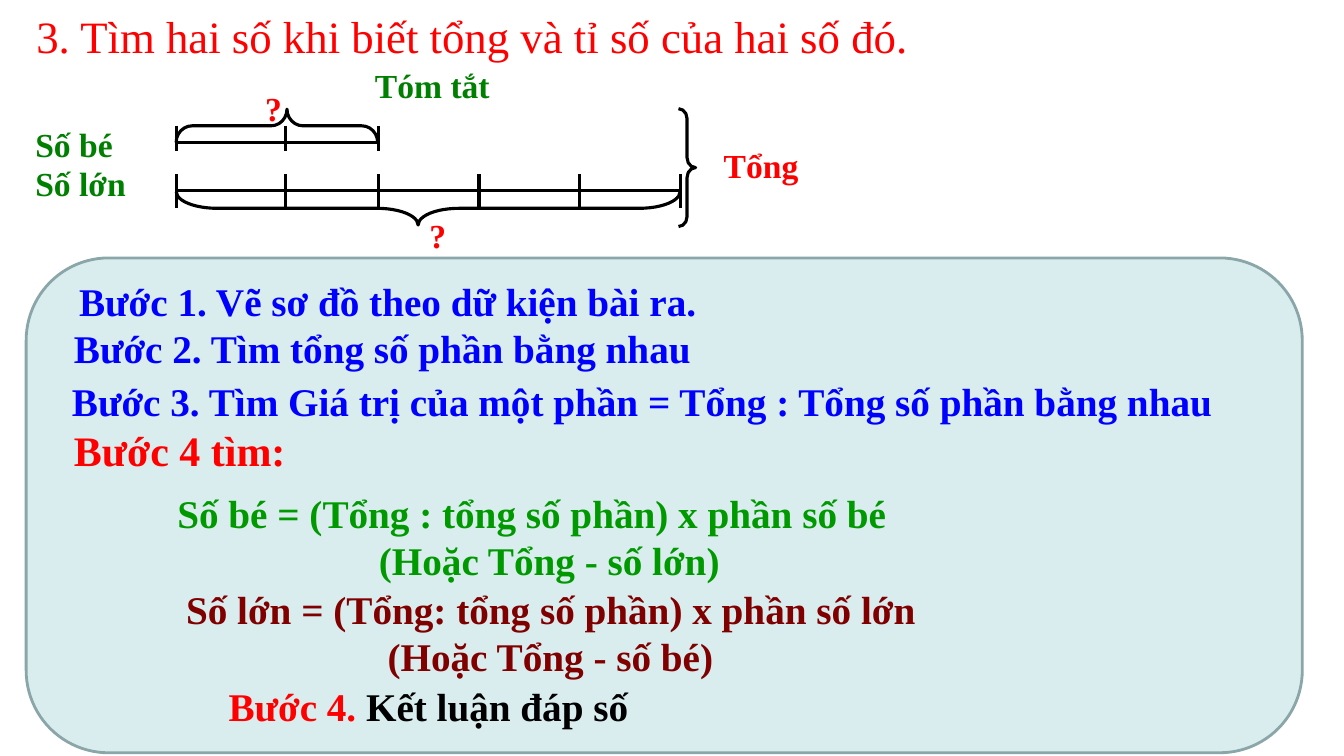
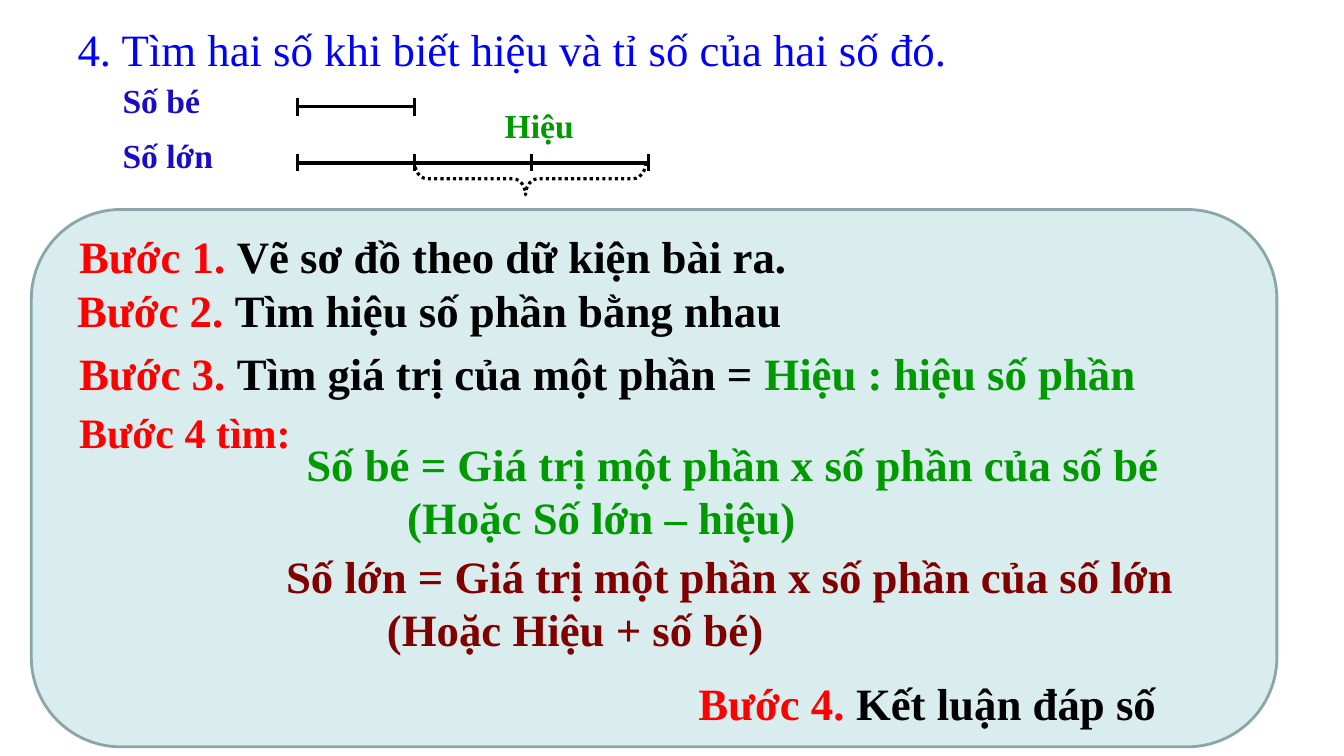
from pptx import Presentation
from pptx.dml.color import RGBColor
from pptx.enum.dml import MSO_LINE
from pptx.enum.shapes import MSO_CONNECTOR, MSO_SHAPE
from pptx.enum.text import MSO_ANCHOR, MSO_AUTO_SIZE, PP_ALIGN
from pptx.oxml.xmlchemy import OxmlElement
from pptx.util import Cm, Pt

FONT = "Times New Roman"
BLACK = RGBColor(0x00, 0x00, 0x00)
RED = RGBColor(0xFF, 0x00, 0x00)
BLUE = RGBColor(0x00, 0x00, 0xFF)
INDIGO = RGBColor(0x19, 0x0B, 0xC8)
GREEN = RGBColor(0x00, 0x99, 0x00)
FOREST = RGBColor(0x00, 0x80, 0x00)
MAROON = RGBColor(0x80, 0x00, 0x00)
PALE = RGBColor(0xD9, 0xED, 0xEF)
EDGE = RGBColor(0x8A, 0xA6, 0xA8)


def place(shape, left, top, width, height):
    """Move and size a shape in centimetres."""
    shape.left, shape.top = Cm(left), Cm(top)
    shape.width, shape.height = Cm(width), Cm(height)


def write(shape, lines, bold=True):
    """Fill a shape with lines of (parts, size, indent, gap)."""
    frame = shape.text_frame
    frame.word_wrap = True
    frame.auto_size = MSO_AUTO_SIZE.NONE
    frame.vertical_anchor = MSO_ANCHOR.TOP
    for index, (parts, size, indent, gap) in enumerate(lines):
        para = frame.add_paragraph() if index else frame.paragraphs[0]
        props = para._p.get_or_add_pPr()
        props.set("marL", str(Cm(indent)))
        props.set("indent", "0")
        props.append(OxmlElement("a:buNone"))
        para.alignment = PP_ALIGN.LEFT
        para.space_before, para.space_after = Pt(gap), Pt(0)
        for text, color in parts:
            run = para.add_run()
            run.text = text
            font = run.font
            font.name, font.size, font.bold = FONT, Pt(size), bold
            font.color.rgb = color


def say(slide, left, top, width, height, lines):
    """Add a text box with the given lines."""
    box = slide.shapes.add_textbox(Cm(left), Cm(top), Cm(width), Cm(height))
    write(box, lines)


def label(slide, left, top, text, color):
    """Add a short bold label of a sketch."""
    say(slide, left, top, 4, 1.3, [([(text, color)], 24, 0, 0)])


def stroke(slide, start, end):
    """Draw a straight black line."""
    line = slide.shapes.add_connector(MSO_CONNECTOR.STRAIGHT, *map(Cm, start + end))
    line.line.color.rgb = BLACK
    line.line.width = Pt(2.25)
    line._element.spPr.append(OxmlElement("a:effectLst"))


def ruler(slide, marks, level, top, foot):
    """Draw a level line with a tick at each mark."""
    stroke(slide, (marks[0], level), (marks[-1], level))
    for mark in marks:
        stroke(slide, (mark, top), (mark, foot))


def brace(slide, left, top, width, height, bends, turn=0, dotted=False):
    """Draw a brace that fills the box after its turn."""
    wide, high = (height, width) if turn else (width, height)
    x, y = left + (width - wide) / 2, top + (height - high) / 2
    shape = slide.shapes.add_shape(MSO_SHAPE.RIGHT_BRACE, Cm(x), Cm(y), Cm(wide), Cm(high))
    shape.rotation = turn
    shape.shadow.inherit = False
    shape.fill.background()
    shape.line.color.rgb = BLACK
    shape.line.width = Pt(2.25)
    if dotted:
        shape.line.dash_style = MSO_LINE.ROUND_DOT
    for index, bend in enumerate(bends):
        shape.adjustments[index] = bend


def sketch_sum(slide, left, top):
    """Draw the two lengths and their sum."""
    marks = [left + 3.81, left + 6.55] + [left + 8.89 + 2.54 * step for step in range(4)]
    ruler(slide, marks[:3], top + 2.08, top + 1.65, top + 2.29)
    ruler(slide, marks, top + 3.28, top + 2.87, top + 3.73)
    brace(slide, left + 16.46, top + 1.22, 0.43, 2.97, (0.58, 0.5))
    brace(slide, left + 3.8, top + 1.23, 5.08, 0.84, (0.48, 0.55), 270)
    brace(slide, left + 3.8, top + 3.31, 12.7, 0.84, (1.23, 0.52), 90)
    for x, y, text, color in [
        (8.56, 0, "Tóm tắt", FOREST),
        (0, 1.47, "Số bé", FOREST),
        (0, 2.46, "Số lớn", FOREST),
        (5.79, 0.56, "?", RED),
        (9.93, 3.78, "?", RED),
        (17.35, 2.01, "Tổng", RED),
    ]:
        label(slide, left + x, top + y, text, color)


def sketch_gap(slide, left, top):
    """Draw the two lengths and their difference."""
    marks = [left + 4.65 + 2.95 * step for step in range(4)]
    ruler(slide, marks[:2], top + 0.79, top + 0.58, top + 1.02)
    ruler(slide, marks, top + 2.21, top + 1.98, top + 2.41)
    brace(slide, left + 7.61, top + 2.2, 5.82, 0.81, (0.39, 0.52), 90, True)
    label(slide, left, top, "Số bé", INDIGO)
    label(slide, left, top + 1.37, "Số lớn", INDIGO)
    label(slide, left + 9.63, top + 0.61, "Hiệu", GREEN)


def panel(slide, left, top, width, height, steps, rules):
    """Draw the rounded panel with its steps and rules."""
    body = slide.placeholders[1]
    card = slide.shapes.add_shape(
        MSO_SHAPE.ROUNDED_RECTANGLE, Cm(left), Cm(top), Cm(width), Cm(height))
    card.shadow.inherit = False
    card.fill.solid()
    card.fill.fore_color.rgb = PALE
    card.line.color.rgb = EDGE
    card.line.width = Pt(2)
    body._element.addprevious(card._element)
    place(body, left + 0.9, top + 0.36, width - 1.2, 5.4)
    write(body, steps)
    for x, y, lines in rules:
        say(slide, left + x, top + y, width - x, 1.4 * len(lines), lines)


def pair(first, second, color, size, indent):
    """Return a rule and its indented other way."""
    return [([(first, color)], size, 0, 0), ([(second, color)], size, indent, 0)]


def closing(size):
    """Return the last step."""
    return [([("Bước 4. ", RED), ("Kết luận đáp số", BLACK)], size, 0, 0)]


def start(deck, left, top, text, color):
    """Add a slide with its title."""
    slide = deck.slides.add_slide(deck.slide_layouts[1])
    place(slide.shapes.title, left, top, 23.7, 1.63)
    write(slide.shapes.title, [([(text, color)], 32, 0, 0)], False)
    return slide


def sum_slide(deck):
    """Build the slide on sum and ratio."""
    slide = start(deck, 0.66, 0.08, "3. Tìm hai số khi biết tổng và tỉ số của hai số đó.", RED)
    sketch_sum(slide, 0.64, 1.52)
    steps = [
        ([("Bước 1. Vẽ sơ đồ theo dữ kiện bài ra.", BLUE)], 28, 0.18, 0),
        ([("Bước 2. Tìm tổng số phần bằng nhau", BLUE)], 28, 0.05, 0),
        ([("Bước 3. Tìm Giá trị của một phần = Tổng : Tổng số phần bằng nhau", BLUE)], 28, 0, 4),
        ([("Bước 4 tìm:", RED)], 30, 0.05, 0),
    ]
    rules = [
        (3.56, 5.71, pair("Số bé = (Tổng : tổng số phần) x phần số bé",
                          "(Hoặc Tổng - số lớn)", GREEN, 28, 5.08)),
        (3.78, 8.13, pair("Số lớn = (Tổng: tổng số phần) x phần số lớn",
                          "(Hoặc Tổng - số bé)", MAROON, 28, 5.08)),
        (4.85, 10.57, closing(28)),
    ]
    panel(slide, 0.66, 6.5, 32.16, 12.47, steps, rules)


def gap_slide(deck):
    """Build the slide on difference and ratio."""
    slide = start(deck, 1.7, 0.41, "4. Tìm hai số khi biết hiệu và tỉ số của hai số đó.", BLUE)
    sketch_gap(slide, 2.84, 1.9)
    steps = [
        ([("Bước 1. ", RED), ("Vẽ sơ đồ theo dữ kiện bài ra.", BLACK)], 32, 0.05, 0),
        ([("Bước 2. ", RED), ("Tìm hiệu số phần bằng nhau", BLACK)], 32, 0, 0),
        ([("Bước 3. ", RED), ("Tìm giá trị của một phần = ", BLACK),
          ("Hiệu : hiệu số phần", GREEN)], 32, 0.05, 6.5),
        ([("Bước 4 tìm:", RED)], 30, 0.05, 5),
    ]
    rules = [
        (6.68, 5.59, pair("Số bé = Giá trị một phần x số phần của số bé",
                          "(Hoặc Số lớn – hiệu)", GREEN, 32, 2.54)),
        (6.17, 8.41, pair("Số lớn = Giá trị một phần x số phần của số lớn",
                          "(Hoặc Hiệu + số bé)", MAROON, 32, 2.54)),
        (16.56, 11.63, closing(32)),
    ]
    panel(slide, 0.79, 5.28, 31.39, 13.54, steps, rules)


def main():
    """Build and save the deck."""
    deck = Presentation()
    deck.slide_width, deck.slide_height = Cm(33.87), Cm(19.05)
    sum_slide(deck)
    gap_slide(deck)
    deck.save("out.pptx")


if __name__ == "__main__":
    main()
